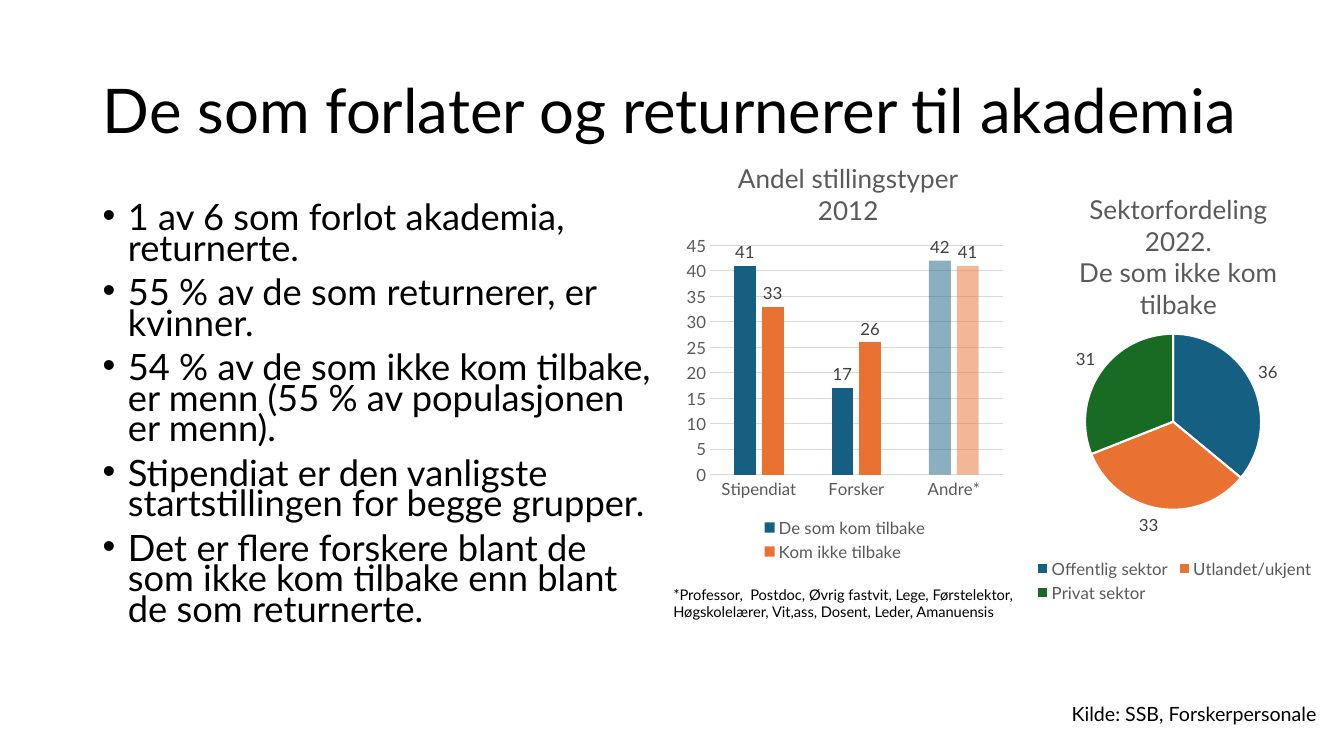
from dataclasses import dataclass

from lxml.etree import SubElement
from pptx import Presentation
from pptx.chart.chart import Chart
from pptx.chart.data import CategoryChartData
from pptx.dml.color import RGBColor
from pptx.enum.chart import XL_CHART_TYPE as ChartType
from pptx.enum.chart import XL_LABEL_POSITION as LabelPosition
from pptx.enum.chart import XL_LEGEND_POSITION as LegendPosition
from pptx.enum.chart import XL_TICK_MARK as TickMark
from pptx.enum.text import MSO_ANCHOR as Anchor
from pptx.oxml import parse_xml
from pptx.oxml.ns import nsdecls, qn
from pptx.slide import Slide
from pptx.text.text import Font
from pptx.util import Emu, Pt

PX = 9144  # 100 px to the inch
FONT = "Lato"
BLACK = RGBColor(0x00, 0x00, 0x00)
WHITE = RGBColor(0xFF, 0xFF, 0xFF)
GREY = RGBColor(0x59, 0x59, 0x59)
LABEL_GREY = RGBColor(0x40, 0x40, 0x40)
GRID_GREY = RGBColor(0xD9, 0xD9, 0xD9)
BLUE = RGBColor(0x15, 0x60, 0x82)
ORANGE = RGBColor(0xE9, 0x71, 0x32)
GREEN = RGBColor(0x19, 0x6B, 0x24)
PALETTE = (BLUE, ORANGE, GREEN)


@dataclass(frozen=True)
class Box:
    left: int
    top: int
    width: int
    height: int

    def emu(self) -> list[Emu]:
        return [Emu(n * PX) for n in (self.left, self.top, self.width, self.height)]


@dataclass(frozen=True)
class TextBlock:
    box: Box
    lines: tuple[str, ...]
    size: float
    anchor: Anchor = Anchor.TOP
    line_spacing: float = 1.0
    bulleted: bool = False


@dataclass(frozen=True)
class ChartBlock:
    box: Box
    kind: ChartType
    title: str
    title_at: dict[str, float]  # fractions of the chart area
    plot_at: dict[str, float]
    categories: tuple[str, ...]
    series: dict[str, tuple[int, ...]]


TEXTS = (
    TextBlock(Box(92, 40, 1150, 145), ("De som forlater og returnerer til akademia",),
              44, Anchor.MIDDLE, 0.9),
    TextBlock(Box(92, 200, 567, 476), (
        "1 av 6 som forlot akademia, returnerte.",
        "55 % av de som returnerer, er kvinner.",
        "54 % av de som ikke kom tilbake, er menn (55 % av populasjonen er menn).",
        "Stipendiat er den vanligste startstillingen for begge grupper.",
        "Det er flere forskere blant de som ikke kom tilbake enn blant de som returnerte.",
    ), 25.9, line_spacing=0.7, bulleted=True),
    TextBlock(Box(658, 576, 419, 47), (
        "*Professor,  Postdoc, Øvrig fastvit, Lege, Førstelektor, "
        "Høgskolelærer, Vit,ass, Dosent, Leder, Amanuensis",), 10.5),
    TextBlock(Box(1053, 691, 280, 34), ("Kilde: SSB, Forskerpersonale",), 14),
)

POSITIONS = ChartBlock(
    Box(675, 132, 326, 429), ChartType.COLUMN_CLUSTERED, "Andel stillingstyper 2012",
    {"x": 0.16, "y": 0.05}, {"x": 0.09, "y": 0.26, "w": 0.89, "h": 0.53},
    ("Stipendiat", "Forsker", "Andre*"),
    {"De som kom tilbake": (41, 17, 42), "Kom ikke tilbake": (33, 26, 41)},
)
SECTORS = ChartBlock(
    Box(1017, 165, 296, 437), ChartType.PIE,
    "Sektorfordeling 2022.\nDe som ikke kom tilbake",
    {"x": 0.17, "y": 0.05}, {"x": 0.2, "y": 0.38, "w": 0.59, "h": 0.4},
    ("Offentlig sektor", "Utlandet/ukjent", "Privat sektor"),
    {"Sektor": (36, 33, 31)},
)


def style_font(font: Font, size: float, color: RGBColor) -> None:
    font.name = FONT
    font.size = Pt(size)
    font.bold = False
    font.color.rgb = color


def add_text(slide: Slide, block: TextBlock) -> None:
    frame = slide.shapes.add_textbox(*block.box.emu()).text_frame
    frame.word_wrap = True
    frame.vertical_anchor = block.anchor
    frame.text = "\n".join(block.lines)
    for paragraph in frame.paragraphs:
        paragraph.line_spacing = block.line_spacing
        for run in paragraph.runs:
            style_font(run.font, block.size, BLACK)
        if block.bulleted:
            paragraph.space_before = Pt(10)
            properties = paragraph._p.get_or_add_pPr()
            properties.set("marL", str(25 * PX))
            properties.set("indent", str(-25 * PX))
            SubElement(properties, qn("a:buFont")).set("typeface", "Arial")
            SubElement(properties, qn("a:buChar")).set("char", "•")


def make_layout(place: dict[str, float], target: str = ""):
    """Build a manual chart layout from fractions of the chart area."""
    modes = "".join(f'<c:{axis}Mode val="edge"/>' for axis in "xy")
    values = "".join(f'<c:{key} val="{value}"/>' for key, value in place.items())
    return parse_xml(f'<c:layout {nsdecls("c")}><c:manualLayout>{target}{modes}{values}'
                     '</c:manualLayout></c:layout>')


def add_chart(slide: Slide, block: ChartBlock) -> Chart:
    data = CategoryChartData()
    data.categories = block.categories
    for name, values in block.series.items():
        data.add_series(name, values)
    chart = slide.shapes.add_chart(block.kind, *block.box.emu(), data).chart
    style_font(chart.font, 10, BLACK)

    # Title
    chart.has_title = True
    frame = chart.chart_title.text_frame
    frame.text = block.title
    for paragraph in frame.paragraphs:
        for run in paragraph.runs:
            style_font(run.font, 18.6, GREY)

    # Places of title and plot
    for old in chart.element.xpath("c:chart/c:title/c:layout | c:chart/c:plotArea/c:layout"):
        old.getparent().remove(old)
    chart.element.xpath("c:chart/c:title/c:tx")[0].addnext(make_layout(block.title_at))
    chart.element.xpath("c:chart/c:plotArea")[0].insert(
        0, make_layout(block.plot_at, '<c:layoutTarget val="inner"/>'))

    # Legend and value labels
    chart.has_legend = True
    chart.legend.position = LegendPosition.BOTTOM
    chart.legend.include_in_layout = False
    style_font(chart.legend.font, 12, GREY)
    plot = chart.plots[0]
    plot.has_data_labels = True
    labels = plot.data_labels
    labels.show_value = True
    labels.position = LabelPosition.OUTSIDE_END
    style_font(labels.font, 12, LABEL_GREY)
    return chart


def style_columns(chart: Chart) -> None:
    plot = chart.plots[0]
    plot.vary_by_categories = False
    plot.gap_width = 219
    plot.overlap = -27
    for series, color in zip(plot.series, PALETTE):
        for part in (series, series.points[2]):
            part.format.fill.solid()
            part.format.fill.fore_color.rgb = color
    # The last category is half transparent
    for color in chart.element.xpath(".//c:dPt/c:spPr/a:solidFill/a:srgbClr"):
        SubElement(color, qn("a:alpha")).set("val", "50000")

    for axis in (chart.category_axis, chart.value_axis):
        axis.major_tick_mark = axis.minor_tick_mark = TickMark.NONE
        style_font(axis.tick_labels.font, 12, GREY)
    values = chart.value_axis
    values.minimum_scale, values.maximum_scale, values.major_unit = 0, 45, 5
    values.format.line.fill.background()
    for line in (chart.category_axis.format.line, values.major_gridlines.format.line):
        line.color.rgb = GRID_GREY
        line.width = Pt(0.75)


def style_pie(chart: Chart) -> None:
    plot = chart.plots[0]
    plot.vary_by_categories = True
    for index, color in enumerate(PALETTE):
        part = plot.series[0].points[index].format
        part.fill.solid()
        part.fill.fore_color.rgb = color
        part.line.color.rgb = WHITE
        part.line.width = Pt(1.5)


def main() -> None:
    presentation = Presentation()
    presentation.slide_width = Emu(1333 * PX)
    presentation.slide_height = Emu(750 * PX)
    slide = presentation.slides.add_slide(presentation.slide_layouts[6])
    for block in TEXTS:
        add_text(slide, block)
    style_columns(add_chart(slide, POSITIONS))
    style_pie(add_chart(slide, SECTORS))
    presentation.save("out.pptx")


if __name__ == "__main__":
    main()
